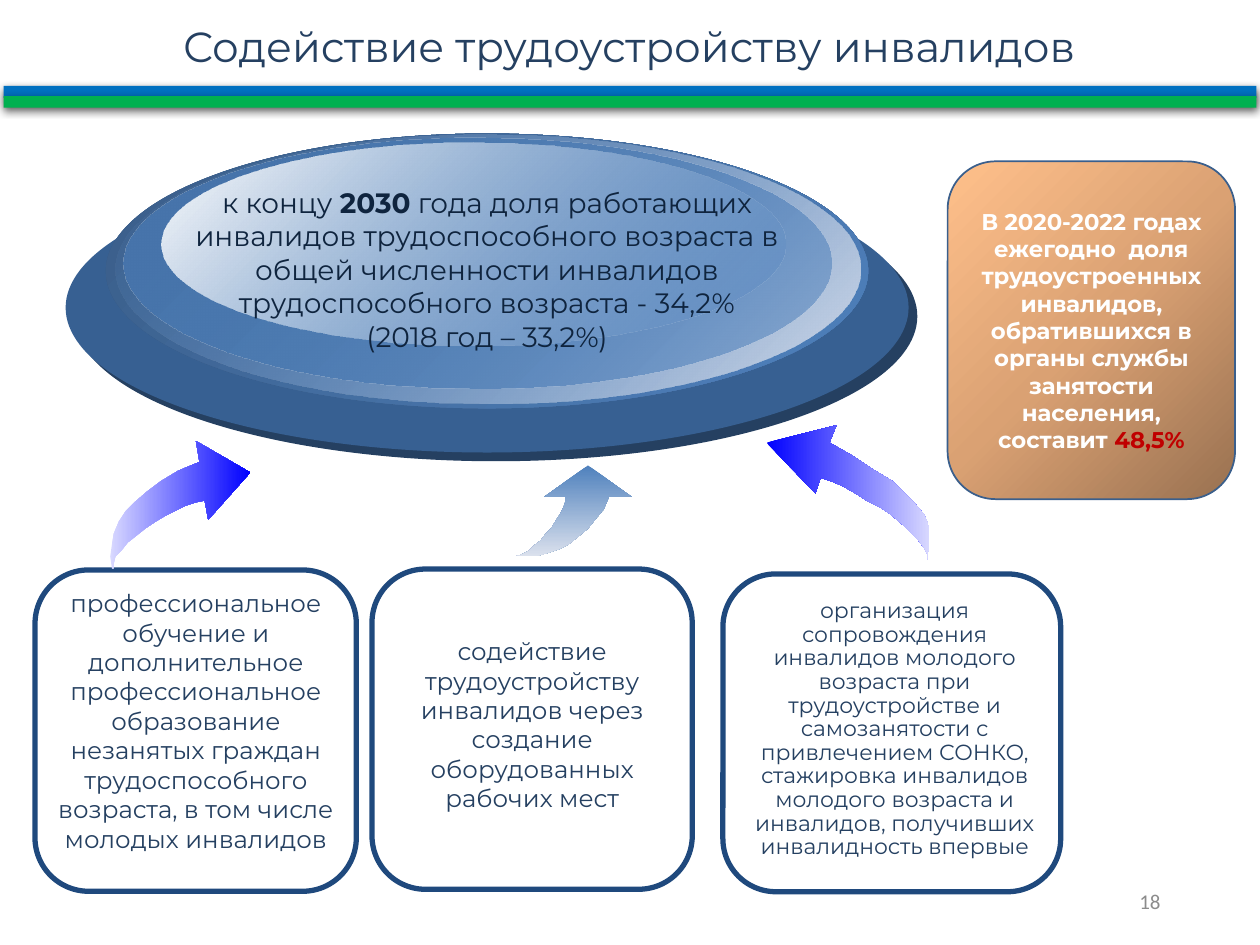
import pptx
import pptx.util
import pptx.oxml
import pptx.oxml.ns
import pptx.dml.color
import pptx.enum.shapes
import pptx.enum.text

Pt = pptx.util.Pt
SHAPE = pptx.enum.shapes.MSO_SHAPE
ALIGN = pptx.enum.text.PP_ALIGN
ANCHOR = pptx.enum.text.MSO_ANCHOR
NS = pptx.oxml.ns.nsdecls("a")

COLORS = {
    "navy": "254061", "ink": "0F243E", "frame": "1F497D", "edge": "3A5F8C",
    "rim": "376092", "steel": "4F81BD", "steel dark": "395C87",
    "steel mid": "4775AB", "steel pale": "D7DEEB", "steel mist": "DBE1ED",
    "blue": "0000FF", "lilac": "D8D8FF", "white": "FFFFFF", "gray": "8C8C8C",
    "red": "C00000", "brown": "997151", "tan": "DAA173", "peach": "FFC08B",
    "stripe blue": "0070C0", "stripe green": "00B050", "black": "000000",
}

# Block arrow outlines, from the tail around the head
LEFT_ARROW = [
    (64, 325), (63, 318), (64, 311), (65, 305), (68, 298), (72, 292), (77, 287),
    (84, 281), (92, 275), (102, 269), (114, 264), (112, 252), (143, 270),
    (119, 297), (117, 286), (112, 287), (106, 289), (100, 292), (94, 295),
    (89, 298), (83, 302), (78, 306), (73, 310), (69, 315), (66, 318), (65, 322),
    (65, 325)]
MIDDLE_ARROW = [
    (291, 318), (299, 318), (306, 318), (313, 316), (319, 314), (325, 311),
    (330, 307), (336, 302), (340, 297), (345, 291), (348, 284), (361, 284),
    (336, 266), (311, 284), (323, 284), (323, 287), (322, 290), (320, 294),
    (318, 297), (315, 302), (312, 305), (309, 309), (305, 312), (302, 315),
    (298, 317), (294, 318)]
RIGHT_ARROW = [
    (530, 320), (531, 313), (531, 307), (531, 301), (528, 294), (523, 288),
    (517, 282), (510, 275), (500, 269), (488, 261), (474, 253), (478, 243),
    (438, 253), (466, 282), (469, 273), (475, 275), (482, 278), (489, 282),
    (495, 286), (503, 290), (509, 294), (516, 300), (521, 305), (525, 309),
    (528, 313), (530, 317)]


def rgb(name):
    return pptx.dml.color.RGBColor.from_string(COLORS[name])


def set_gradient(sp, stops, angle=None):
    """Stops are (percent, colour, opacity); no angle means from the corner."""
    gs = "".join(
        f'<a:gs pos="{pos * 1000}"><a:srgbClr val="{COLORS[color]}">'
        f'<a:alpha val="{alpha * 1000}"/></a:srgbClr></a:gs>'
        for pos, color, alpha in stops)
    if angle is None:
        shade = '<a:path path="circle"><a:fillToRect l="100000" t="100000"/></a:path>'
    else:
        shade = f'<a:lin ang="{angle * 60000}" scaled="0"/>'
    sp.fill.gradient()
    spPr = sp._element.spPr
    spPr.replace(spPr.find(pptx.oxml.ns.qn("a:gradFill")), pptx.oxml.parse_xml(
        f'<a:gradFill {NS} rotWithShape="1"><a:gsLst>{gs}</a:gsLst>{shade}</a:gradFill>'))


def set_style(sp, fill=None, line=None, angle=None):
    sp.shadow.inherit = False
    if fill is None:
        sp.fill.background()
    elif isinstance(fill, str):
        sp.fill.solid()
        sp.fill.fore_color.rgb = rgb(fill)
    else:
        set_gradient(sp, fill, angle)
    if line:
        sp.line.color.rgb = rgb(line[0])
        sp.line.width = Pt(line[1])
    else:
        sp.line.fill.background()


def add_shape(shapes, kind, box, **style):
    sp = shapes.add_shape(kind, *map(Pt, box))
    set_style(sp, **style)
    return sp


def add_arrow(s, points, fill, angle):
    builder = s.shapes.build_freeform(*points[0], scale=Pt(1))
    builder.add_line_segments(points[1:], close=True)
    set_style(builder.convert_to_shape(), fill=fill, angle=angle)


def add_stripe(shapes, box, fill):
    sp = add_shape(shapes, SHAPE.RECTANGLE, box, fill=fill)
    effects = sp._element.spPr.find(pptx.oxml.ns.qn("a:effectLst"))
    effects.append(pptx.oxml.parse_xml(
        f'<a:outerShdw {NS} blurRad="{Pt(4.5)}" dist="{Pt(1.5)}" dir="5400000" '
        f'rotWithShape="0"><a:srgbClr val="{COLORS["black"]}"><a:alpha val="63000"/>'
        '</a:srgbClr></a:outerShdw>'))


def set_text(sp, paragraphs, size, color, font="Montserrat", align=ALIGN.CENTER,
             anchor=ANCHOR.TOP, spacing=1.0):
    """Each paragraph is a list of (text, font overrides)."""
    tf = sp.text_frame
    frame = {"word_wrap": True, "vertical_anchor": anchor,
             "auto_size": pptx.enum.text.MSO_AUTO_SIZE.NONE}
    for key, value in frame.items():
        setattr(tf, key, value)
    for i, runs in enumerate(paragraphs):
        p = tf.add_paragraph() if i else tf.paragraphs[0]
        p.alignment, p.line_spacing = align, spacing
        for text, overrides in runs:
            r = p.add_run()
            r.text = text
            look = {"name": font, "size": Pt(size), "bold": False, "color": color}
            look.update(overrides)
            r.font.color.rgb = rgb(look.pop("color"))
            for key, value in look.items():
                setattr(r.font, key, value)


def add_text(s, box, paragraphs, **look):
    set_text(s.shapes.add_textbox(*map(Pt, box)), paragraphs, **look)


def add_header(s):
    title = s.shapes.title
    place = {"left": 1.5, "top": 8, "width": 716, "height": 36}
    for key, value in place.items():
        setattr(title, key, Pt(value))
    set_text(title, [[("Содействие трудоустройству инвалидов", {})]], 24, "navy")
    stripes = s.shapes.add_group_shape().shapes
    add_stripe(stripes, (2, 49, 716, 7), "stripe blue")
    add_stripe(stripes, (2, 55, 716, 6.5), "stripe green")


def add_goal(s):
    ellipses = [
        ((42.5, 98, 481.7, 165.6), "navy"),
        ((37.5, 93, 481.7, 165.6), "rim"),
        ((60.5, 76.3, 435.6, 157), [(0, "steel dark", 100), (100, "steel", 100)]),
        ((66.2, 77, 425.5, 153.4), [(0, "steel", 0), (100, "steel pale", 100)]),
        ((70.6, 78.5, 404.6, 143.3), [(0, "steel mid", 100), (100, "steel", 48)]),
        ((92.2, 81.4, 356.4, 116), [(0, "white", 100), (100, "steel", 38)]),
    ]
    shapes = s.shapes.add_group_shape().shapes
    for box, fill in ellipses:
        add_shape(shapes, SHAPE.OVAL, box, fill=fill, angle=45)
    add_text(s, (91.5, 102.3, 373.7, 104.4), [
        [("к концу ", {}), ("2030", {"bold": True}),
         (" года доля работающих инвалидов трудоспособного возраста в общей "
          "численности инвалидов трудоспособного возраста - 34,2%", {})],
        [("(2018 год – 33,2%)", {})]], size=16, color="ink")


def add_result(s):
    sp = add_shape(s.shapes, SHAPE.ROUNDED_RECTANGLE, (541.5, 92.2, 164.2, 193),
                   fill=[(0, "brown", 100), (50, "tan", 100), (100, "peach", 100)],
                   line=("edge", 1))
    set_text(sp, [[
        ("В 2020-2022 годах ежегодно  доля трудоустроенных инвалидов, обратившихся "
         "в органы службы занятости населения, составит ", {"bold": True}),
        ("48,5%", {"bold": True, "color": "red"})]],
        13, "white", anchor=ANCHOR.MIDDLE)


def add_measures(s):
    measures = [
        ((20, 325.7, 183.6, 183.6), (24.5, 332.6, 175, 177),
         "профессиональное обучение и дополнительное профессиональное образование "
         "незанятых граждан трудоспособного возраста, в том числе молодых инвалидов",
         {"size": 14}),
        ((212.6, 325.2, 183, 183), (222.5, 360, 163.4, 108.7),
         "содействие трудоустройству инвалидов через создание оборудованных "
         "рабочих мест", {"size": 14}),
        ((413.1, 328, 193, 181.6), (416.2, 329.8, 190, 174.2),
         "организация сопровождения инвалидов молодого возраста при "
         "трудоустройстве и самозанятости с привлечением СОНКО, стажировка "
         "инвалидов молодого возраста и инвалидов, получивших инвалидность впервые",
         {"size": 12.5, "spacing": 0.9, "anchor": ANCHOR.MIDDLE}),
    ]
    for frame, box, text, look in measures:
        add_shape(s.shapes, SHAPE.ROUNDED_RECTANGLE, frame, line=("frame", 3))
        add_text(s, box, [[(text, {})]], color="navy", **look)


def main():
    prs = pptx.Presentation()
    prs.slide_width, prs.slide_height = Pt(720), Pt(540)
    s = prs.slides.add_slide(prs.slide_layouts[5])

    add_header(s)
    add_measures(s)

    # Arrows from the measures up to the goal
    add_arrow(s, LEFT_ARROW, [(0, "lilac", 100), (100, "blue", 100)], 0)
    add_arrow(s, MIDDLE_ARROW, [(0, "steel", 100), (100, "steel mist", 100)], 90)
    add_arrow(s, RIGHT_ARROW, [(0, "blue", 100), (100, "lilac", 100)], 0)

    add_goal(s)
    add_result(s)

    # Slide number
    add_text(s, (508.3, 500.4, 162, 28.8), [[("18", {})]], size=12, color="gray",
             font="Calibri", align=ALIGN.RIGHT, anchor=ANCHOR.MIDDLE)
    prs.save("out.pptx")


if __name__ == "__main__":
    main()
